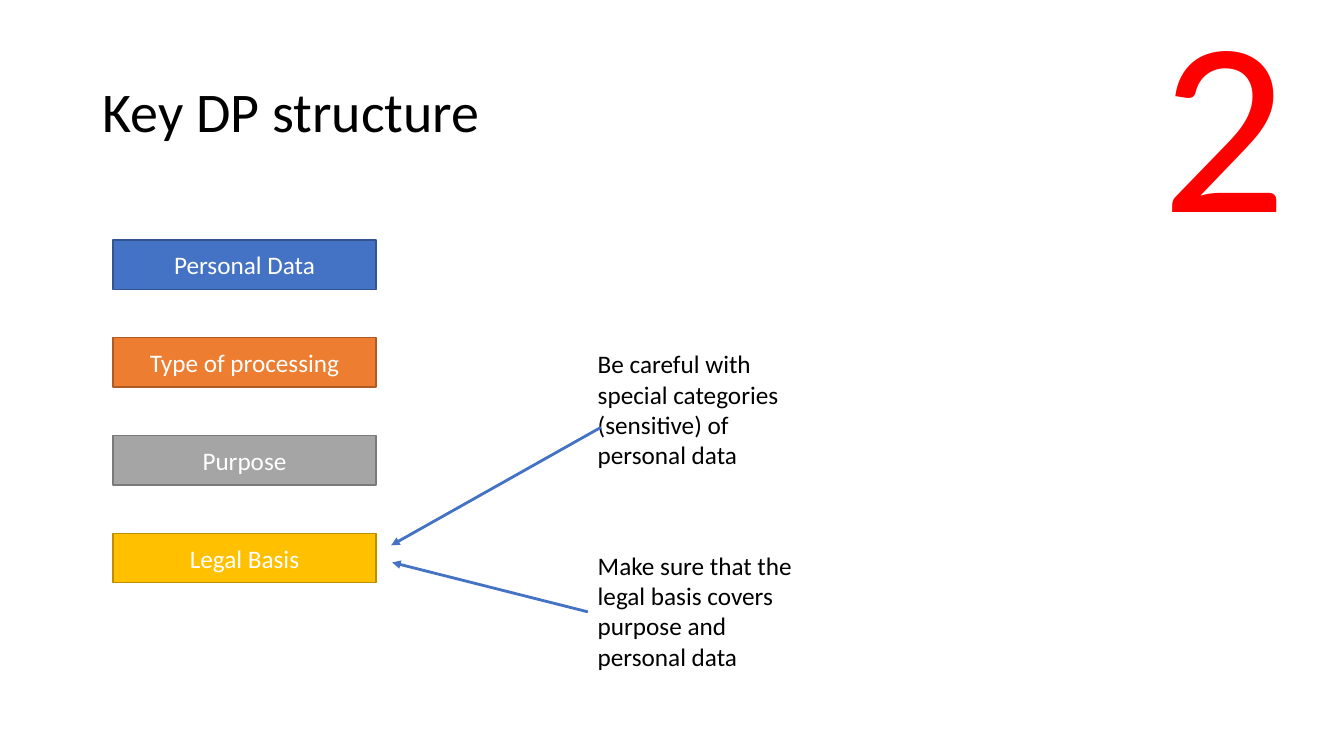
from lxml import etree
from pptx import Presentation
from pptx import util as u
from pptx.dml.color import RGBColor
from pptx.enum import shapes, text
from pptx.oxml.ns import qn

BLACK = RGBColor(0x00, 0x00, 0x00)
WHITE = RGBColor(0xFF, 0xFF, 0xFF)
RED = RGBColor(0xFF, 0x00, 0x00)
BLUE = RGBColor(0x44, 0x72, 0xC4)
NAVY = RGBColor(0x32, 0x54, 0x91)
ORANGE = RGBColor(0xED, 0x7D, 0x31)
RUST = RGBColor(0xAF, 0x5C, 0x24)
GREY = RGBColor(0xA5, 0xA5, 0xA5)
SLATE = RGBColor(0x7A, 0x7A, 0x7A)
GOLD = RGBColor(0xFF, 0xC0, 0x00)
OCHRE = RGBColor(0xBD, 0x8E, 0x00)


def box(*sides):
    return [u.Inches(side) for side in sides]


def write(shape, words, size, color, align=text.PP_ALIGN.LEFT, **frame):
    for name, value in frame.items():
        setattr(shape.text_frame, name, value)
    shape.text_frame.text = words
    para = shape.text_frame.paragraphs[0]
    para.alignment = align
    font = para.runs[0].font
    for name, value in {"name": "Calibri", "size": u.Pt(size)}.items():
        setattr(font, name, value)
    font.color.rgb = color
    return para


deck = Presentation()
deck.slide_width, deck.slide_height = box(13.33, 7.5)
slide = deck.slides.add_slide(deck.slide_layouts[5])

# Title
title = slide.shapes.title
title.left, title.top, title.width, title.height = box(0.92, 0.78, 11.5, 1.45)
para = write(title, "Key DP structure", 40, BLACK, word_wrap=True,
             auto_size=text.MSO_AUTO_SIZE.NONE,
             vertical_anchor=text.MSO_ANCHOR.TOP)
para.line_spacing = 0.9

# Column of building blocks
blocks = [
    ("Personal Data", BLUE, NAVY),
    ("Type of processing", ORANGE, RUST),
    ("Purpose", GREY, SLATE),
    ("Legal Basis", GOLD, OCHRE),
]
for row, (label, fill, edge) in enumerate(blocks):
    block = slide.shapes.add_shape(shapes.MSO_SHAPE.RECTANGLE,
                                   *box(1.12, 2.38 + 0.97 * row, 2.61, 0.49))
    block.shadow.inherit = False
    block.fill.solid()
    block.fill.fore_color.rgb = fill
    block.line.color.rgb = edge
    block.line.width = u.Pt(1)
    write(block, label, 18, WHITE, text.PP_ALIGN.CENTER, word_wrap=True,
          vertical_anchor=text.MSO_ANCHOR.MIDDLE)

# Advice beside the legal basis
advice = [
    "Be careful with special categories (sensitive) of personal data",
    "Make sure that the legal basis covers purpose and personal data",
]
for row, words in enumerate(advice):
    note = slide.shapes.add_textbox(*box(5.83, 3.41 + 2 * row, 2.18, 1.31))
    write(note, words, 18, BLACK, word_wrap=True,
          auto_size=text.MSO_AUTO_SIZE.SHAPE_TO_FIT_TEXT)

# Arrows from the advice to the legal basis
for ends in [(5.96, 4.24, 3.88, 5.41), (5.83, 6.07, 3.89, 5.58)]:
    arrow = slide.shapes.add_connector(shapes.MSO_CONNECTOR.STRAIGHT, *box(*ends))
    arrow.line.color.rgb = BLUE
    arrow.line.width = u.Pt(2)
    etree.SubElement(arrow.line._get_or_add_ln(), qn("a:tailEnd"), type="triangle")
    etree.SubElement(arrow._element.spPr, qn("a:effectLst"))

# Large step number
step = slide.shapes.add_textbox(*box(11.48, -0.41, 1.34, 3.06))
inset = u.Inches(0.04)
write(step, "2", 177.2, RED, word_wrap=False,
      auto_size=text.MSO_AUTO_SIZE.SHAPE_TO_FIT_TEXT,
      vertical_anchor=text.MSO_ANCHOR.MIDDLE,
      margin_left=inset, margin_right=inset,
      margin_top=inset, margin_bottom=inset)

deck.save("out.pptx")
